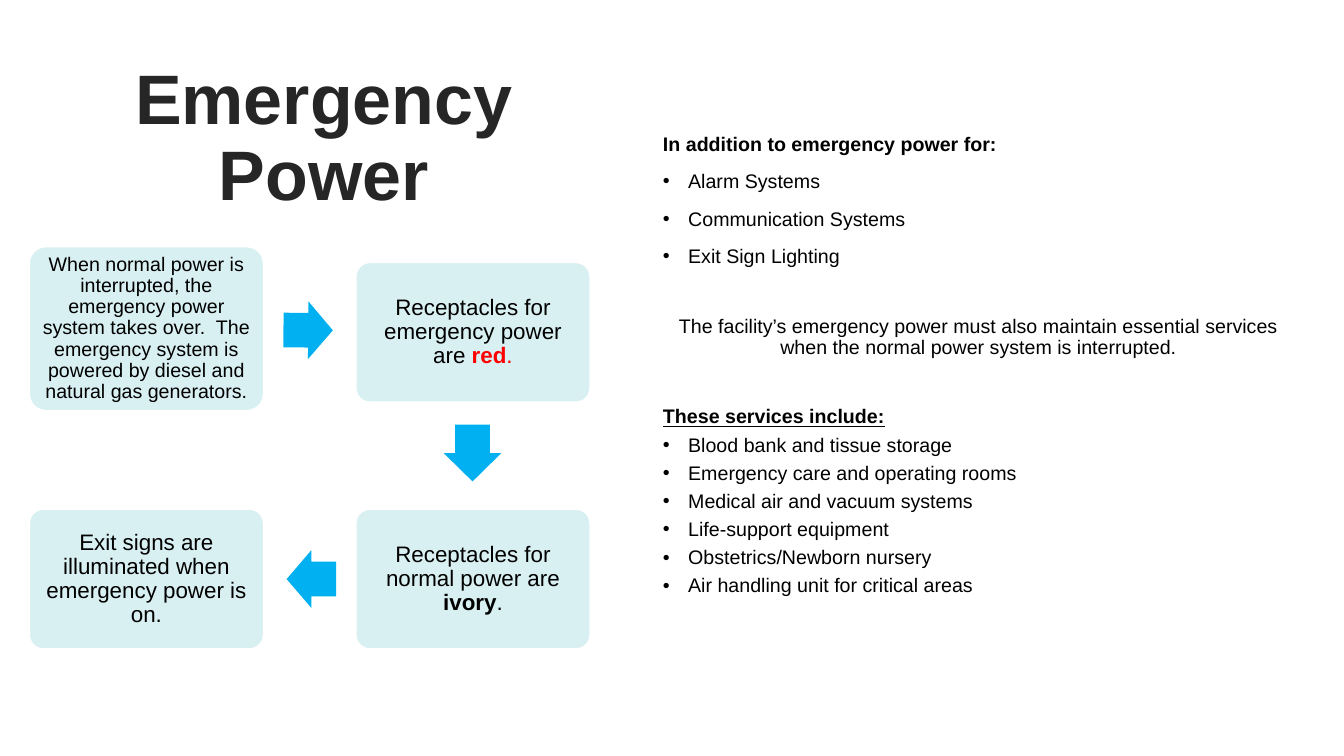
import pptx
import pptx.util
from pptx.dml.color import RGBColor
from pptx.enum.shapes import MSO_SHAPE
from pptx.enum.text import MSO_ANCHOR, MSO_AUTO_SIZE, PP_ALIGN
from pptx.oxml.ns import qn
from lxml import etree

PX = 9525
BLACK = RGBColor(0x00, 0x00, 0x00)
CHARCOAL = RGBColor(0x26, 0x26, 0x26)
RED = RGBColor(0xFF, 0x00, 0x00)
WHITE = RGBColor(0xFF, 0xFF, 0xFF)
PALE_TEAL = RGBColor(0xD9, 0xF0, 0xF2)
BLUE = RGBColor(0x00, 0xB0, 0xF0)

LEFT = PP_ALIGN.LEFT
CENTER = PP_ALIGN.CENTER
SECTION_GAP = 34.5

# width and height of a step, then its place in the flow, inset, size and runs
STEP_WIDTH, STEP_HEIGHT = 223, 133
RIGHT_COLUMN, LOWER_ROW = 311, 250
STEPS = [
    (0, 0, 156, 6, 14, [
        ("When normal power is interrupted, the emergency power system takes over.  "
         "The emergency system is powered by diesel and natural gas generators.", {})]),
    (RIGHT_COLUMN, 15, STEP_HEIGHT, 7, 16, [
        ("Receptacles for emergency power are ", {}),
        ("red", {"bold": True, "color": RED}), (".", {"color": RED})]),
    (RIGHT_COLUMN, LOWER_ROW, STEP_HEIGHT, 7, 16, [
        ("Receptacles for normal power are ", {}), ("ivory", {"bold": True}), (".", {})]),
    (0, LOWER_ROW, STEP_HEIGHT, 7, 16, [
        ("Exit signs are illuminated when emergency power is on.", {})]),
]
# left, top, width, height, rotation
ARROWS = [(242, 52, 47, 55, 0.4), (395, 169, 54, 55, 90), (245, 289, 47, 55, 180)]

POWERED_SYSTEMS = ["Alarm Systems", "Communication Systems", "Exit Sign Lighting"]
ESSENTIAL_SERVICES = [
    "Blood bank and tissue storage",
    "Emergency care and operating rooms",
    "Medical air and vacuum systems",
    "Life-support equipment",
    "Obstetrics/Newborn nursery",
    "Air handling unit for critical areas",
]


def apply(target, values):
    for name, value in values.items():
        setattr(target, name, value)


def px(*lengths):
    return [length * PX for length in lengths]


def write(paragraph, runs, size, color=BLACK, **layout):
    """Fill a paragraph with (text, font values) runs and set its layout."""
    apply(paragraph, layout)
    for text, changes in runs:
        values = {"name": "Arial", "size": pptx.util.Pt(size), "bold": False, **changes}
        run = paragraph.add_run()
        run.text = text
        run.font.color.rgb = values.pop("color", color)
        apply(run.font, values)


def add_bullet(paragraph):
    properties = paragraph._p.get_or_add_pPr()
    properties.set("marL", str(24 * PX))
    properties.set("indent", str(-24 * PX))
    etree.SubElement(properties, qn("a:buFont")).set("typeface", "Arial")
    etree.SubElement(properties, qn("a:buChar")).set("char", "•")


def place_title(slide, left, top, width, height):
    title = slide.shapes.title
    apply(title, dict(zip(("left", "top", "width", "height"), px(left, top, width, height))))
    frame = title.text_frame
    apply(frame, {"word_wrap": True, "auto_size": MSO_AUTO_SIZE.NONE,
                  "vertical_anchor": MSO_ANCHOR.MIDDLE})
    write(frame.paragraphs[0], [("Emergency Power", {"bold": True})], 50, CHARCOAL,
          alignment=CENTER, line_spacing=0.9, space_after=pptx.util.Pt(6))


def add_step(slide, left, top, height, inset, size, runs):
    step = slide.shapes.add_shape(MSO_SHAPE.ROUNDED_RECTANGLE,
                                  *px(left, top, STEP_WIDTH, height))
    step.adjustments[0] = 0.1
    step.shadow.inherit = False
    step.fill.solid()
    step.fill.fore_color.rgb = PALE_TEAL
    step.line.color.rgb = WHITE
    step.line.width = pptx.util.Pt(1)
    frame = step.text_frame
    apply(frame, {"word_wrap": True, "vertical_anchor": MSO_ANCHOR.MIDDLE})
    apply(frame, {f"margin_{side}": inset * PX for side in ("left", "top", "right", "bottom")})
    write(frame.paragraphs[0], runs, size, alignment=CENTER, line_spacing=0.9)


def add_arrow(slide, left, top, width, height, rotation):
    arrow = slide.shapes.add_shape(MSO_SHAPE.RIGHT_ARROW, *px(left, top, width, height))
    arrow.adjustments[0], arrow.adjustments[1] = 0.6, 0.5
    arrow.rotation = rotation
    arrow.shadow.inherit = False
    arrow.fill.solid()
    arrow.fill.fore_color.rgb = BLUE
    arrow.line.fill.background()


def add_power_flow(slide, left, top):
    for x, y, *step in STEPS:
        add_step(slide, left + x, top + y, *step)
    for x, y, *arrow in ARROWS:
        add_arrow(slide, left + x, top + y, *arrow)


def add_services(slide, left, top, width, height):
    frame = slide.shapes.add_textbox(*px(left, top, width, height)).text_frame
    frame.word_wrap = True
    # text, font values, bulleted, alignment, line spacing, space before
    lines = [("In addition to emergency power for:", {"bold": True}, False, LEFT, 0.9, 0)]
    lines += [(system, {}, True, LEFT, 1.0, 10) for system in POWERED_SYSTEMS]
    lines += [
        ("The facility’s emergency power must also maintain essential services "
         "when the normal power system is interrupted.", {}, False, CENTER, 0.9, SECTION_GAP),
        ("These services include:", {"bold": True, "underline": True},
         False, LEFT, 0.9, SECTION_GAP),
    ]
    lines += [(service, {}, True, LEFT, 0.9, 5) for service in ESSENTIAL_SERVICES]
    for index, (text, font, bulleted, alignment, spacing, before) in enumerate(lines):
        paragraph = frame.add_paragraph() if index else frame.paragraphs[0]
        if bulleted:
            add_bullet(paragraph)
        write(paragraph, [(text, font)], 14, alignment=alignment, line_spacing=spacing,
              space_before=pptx.util.Pt(before))


def main():
    deck = pptx.Presentation()
    deck.slide_width, deck.slide_height = px(1280, 720)
    slide = deck.slides.add_slide(deck.slide_layouts.get_by_name("Title Only"))
    place_title(slide, 27, 59, 563, 148)
    add_services(slide, 622, 123, 620, 530)
    add_power_flow(slide, 28, 235)
    deck.save("out.pptx")


if __name__ == "__main__":
    main()
